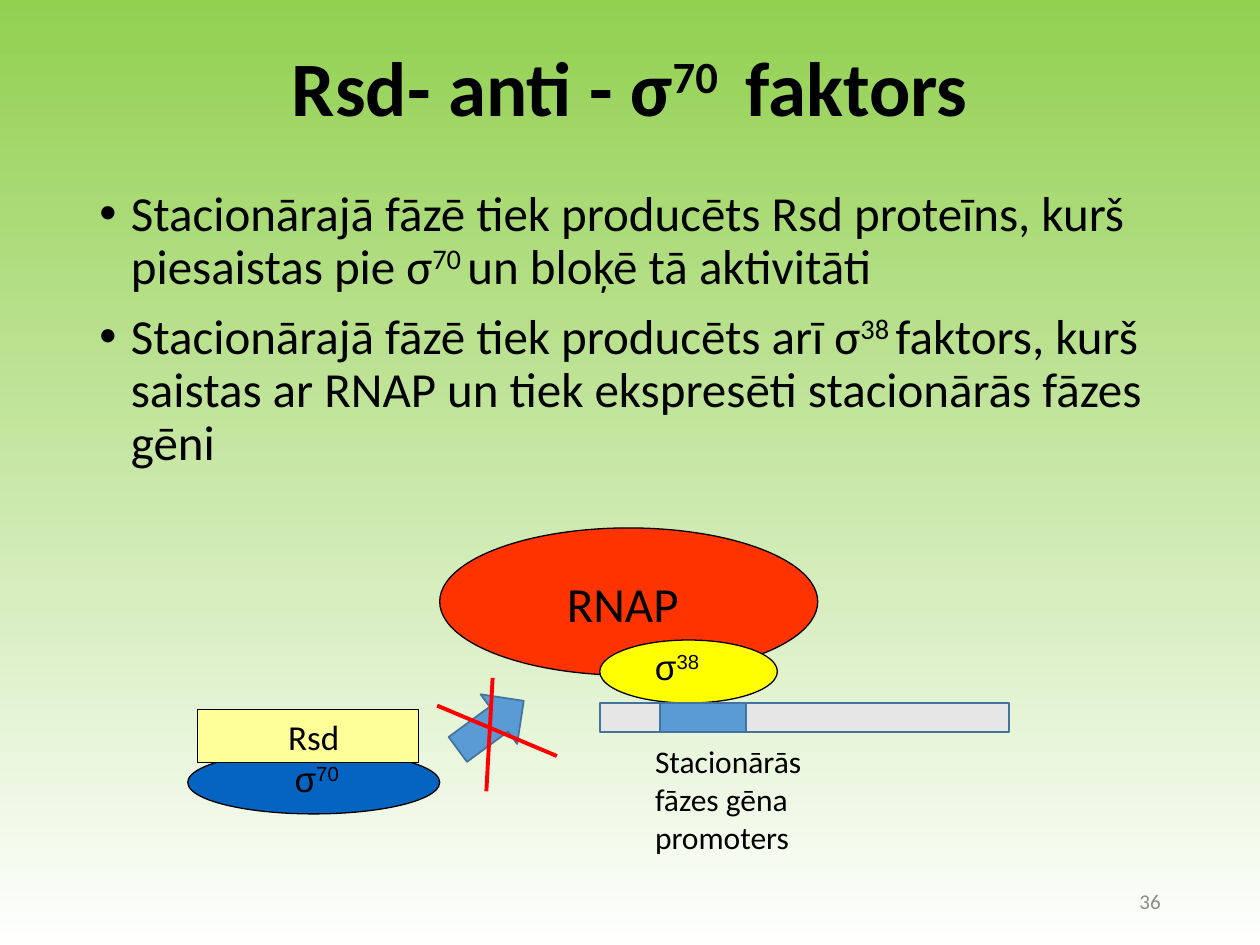
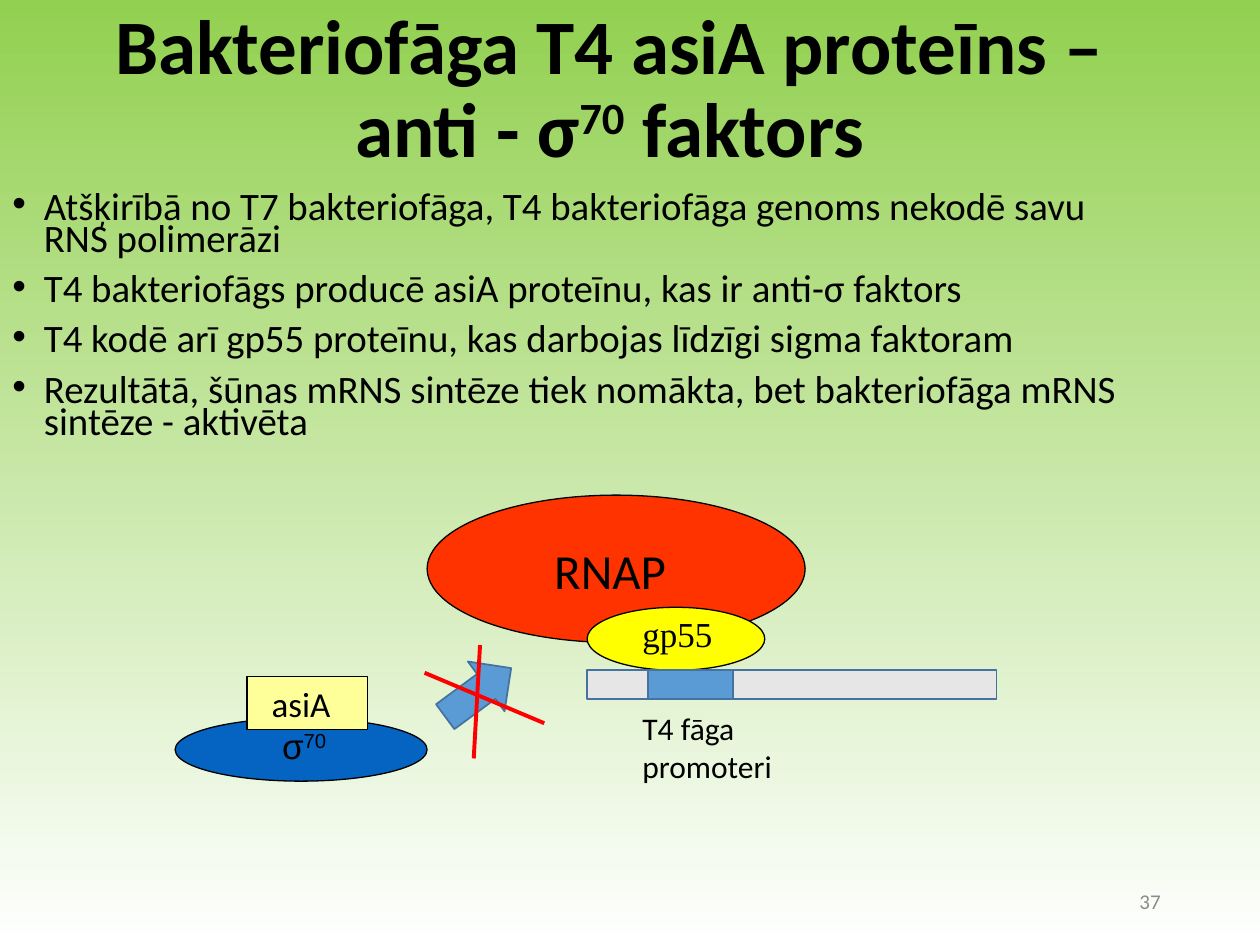
from collections import namedtuple
from dataclasses import dataclass

from lxml.etree import SubElement
from pptx import Presentation
from pptx.dml.color import RGBColor
from pptx.enum.shapes import MSO_CONNECTOR as Connector, MSO_SHAPE as Shape
from pptx.enum.text import MSO_ANCHOR as Anchor, MSO_AUTO_SIZE as AutoSize, PP_ALIGN as Align
from pptx.oxml.ns import qn
from pptx.util import Inches, Pt

Box = namedtuple("Box", "left top width height")
Style = namedtuple("Style", "size font color bold", defaults=("Calibri", "000000", False))


@dataclass(frozen=True)
class Theme:
    """Colours, line widths and text styles of the deck."""
    sky: str = "92D050"
    ground: str = "FFFFFF"
    outline: str = "000000"
    polymerase: str = "FF3300"
    sigma: str = "0563C1"
    blocker: str = "FFFF99"
    factor: str = "FFFF00"
    dna: str = "E7E6E6"
    accent: str = "5B9BD5"
    accent_line: str = "43739E"
    cross: str = "FF0000"
    thin: float = 0.75
    medium: float = 1
    thick: float = 2.25
    title: Style = Style(44, bold=True)
    large: Style = Style(28)
    protein: Style = Style(20)
    greek: Style = Style(20, "Arial")
    serif: Style = Style(20, "Times New Roman")
    caption: Style = Style(18)
    number: Style = Style(12, color="8C8C8C")


THEME = Theme()


def rgb(color):
    """Turn a hex string into a colour."""
    return RGBColor.from_string(color)


def place(box, left, top, width, height):
    """Return a part's box in page inches from its offset inside a parent box."""
    return Box(box.left + left, box.top + top, width, height)


def write(para, text, style):
    """Fill a paragraph; the parts between ^ marks are superscript."""
    for index, part in enumerate(text.split("^")):
        if not part:
            continue
        span = para.add_run()
        span.text = part
        font = span.font
        font.size, font.name, font.bold = Pt(style.size), style.font, style.bold
        font.color.rgb = rgb(style.color)
        if index % 2:
            span._r.get_or_add_rPr().set("baseline", "30000")


def add_text(page, box, text, style, align=Align.LEFT, anchor=Anchor.TOP):
    """Add a wrapping one-paragraph text box."""
    frame = page.shapes.add_textbox(*map(Inches, box)).text_frame
    frame.word_wrap = True
    frame.vertical_anchor = anchor
    frame.paragraphs[0].alignment = align
    write(frame.paragraphs[0], text, style)


def add_figure(shapes, kind, box, fill, line=THEME.outline, width=THEME.thin):
    """Add a filled, outlined preset shape."""
    figure = shapes.add_shape(kind, *map(Inches, box))
    figure.shadow.inherit = False
    figure.fill.solid()
    figure.fill.fore_color.rgb = rgb(fill)
    figure.line.color.rgb = rgb(line)
    figure.line.width = Pt(width)
    return figure


def add_title(page, box, text):
    """Place and format the title placeholder."""
    title = page.shapes.title
    title.left, title.top, title.width, title.height = map(Inches, box)
    frame = title.text_frame
    frame.auto_size = AutoSize.NONE
    frame.vertical_anchor = Anchor.MIDDLE
    para = frame.paragraphs[0]
    para.alignment = Align.CENTER
    para.line_spacing = 0.9
    write(para, text, THEME.title)


def add_bullets(page, box, items, style, spacing):
    """Add a bulleted list."""
    frame = page.shapes.add_textbox(*map(Inches, box)).text_frame
    frame.word_wrap = True
    for index, item in enumerate(items):
        para = frame.add_paragraph() if index else frame.paragraphs[0]
        props = para._p.get_or_add_pPr()
        props.set("marL", str(Inches(0.25)))
        props.set("indent", str(Inches(-0.25)))
        SubElement(props, qn("a:buFont")).set("typeface", "Arial")
        SubElement(props, qn("a:buChar")).set("char", "•")
        para.line_spacing = spacing
        para.space_before = Pt(10 if index else 0)
        write(para, item, style)


def add_blocked_arrow(page, box):
    """Add the crossed-out arrow as one group."""
    shapes = page.shapes.add_group_shape().shapes
    arrow = add_figure(shapes, Shape.DOWN_ARROW, place(box, 0.18, 0.05, 0.49, 0.65),
                       THEME.accent, THEME.accent_line, THEME.medium)
    arrow.rotation = 233.6
    for start, end in (((0.39, 0.9), (0.44, 0)), ((0.95, 0.62), (0, 0.22))):
        ends = [Inches(edge + shift) for point in (start, end)
                for edge, shift in zip((box.left, box.top), point)]
        stroke = shapes.add_connector(Connector.STRAIGHT, *ends)
        stroke.line.color.rgb = rgb(THEME.cross)
        stroke.line.width = Pt(THEME.thick)
        SubElement(stroke._element.spPr, qn("a:effectLst"))


def add_diagram(page, box, blocker, blocker_width, factor, factor_style, caption):
    """Draw the blocked sigma factor beside the polymerase on its promoter."""
    def ellipse(spot, fill):
        add_figure(page.shapes, Shape.OVAL, place(box, *spot), fill)

    def label(spot, text, style, align=Align.LEFT):
        add_text(page, place(box, *spot), text, style, align)

    ellipse((2, 0, 3, 1.17), THEME.polymerase)
    ellipse((0, 1.77, 2, 0.5), THEME.sigma)
    label((2.91, 0.31, 1.42, 0.57), "RNAP", THEME.large)
    label((0.75, 1.77, 1, 0.44), "σ^70^", THEME.greek)
    blocker_left = 0.95 + 0.1 - blocker_width / 2 if blocker_width < 1 else 0.08
    add_figure(page.shapes, Shape.RECTANGLE,
               place(box, blocker_left, 1.44, blocker_width, 0.42), THEME.blocker)
    label((0.25, 1.44, 1.5, 0.44), blocker, THEME.protein, Align.CENTER)
    add_blocked_arrow(page, place(box, 1.98, 1.19, 0.95, 0.9))
    ellipse((3.27, 0.89, 1.41, 0.5), THEME.factor)
    label((3.61, 0.88, 1, 0.44), factor, factor_style)
    for left, width, fill in ((3.27, 3.25, THEME.dna), (3.75, 0.68, THEME.accent)):
        add_figure(page.shapes, Shape.RECTANGLE, place(box, left, 1.39, width, 0.23),
                   fill, THEME.accent_line, THEME.medium)
    label((3.61, 1.65, 1.59, 1.01), caption, THEME.caption)


def add_page(deck, number, title_left, title):
    """Add a title-only slide with its title and page number."""
    page = deck.slides.add_slide(deck.slide_layouts[5])
    add_title(page, Box(title_left, 0, 8.62, 1.45), title)
    add_text(page, Box(7.06, 6.95, 2.25, 0.4), str(number), THEME.number,
             Align.RIGHT, Anchor.MIDDLE)
    return page


def add_rsd_page(deck):
    """Build the slide on the Rsd protein."""
    page = add_page(deck, 36, 0.69, "Rsd- anti - σ^70 ^ faktors")
    add_bullets(page, Box(0.69, 1.45, 8.62, 2.7), (
        "Stacionārajā fāzē tiek producēts Rsd proteīns, kurš piesaistas pie "
        "σ^70 ^un bloķē tā aktivitāti",
        "Stacionārajā fāzē tiek producēts arī σ^38 ^faktors, kurš saistas ar RNAP "
        "un tiek ekspresēti stacionārās fāzes gēni",
    ), THEME.large, 0.9)
    add_diagram(page, Box(1.49, 4.19, 6.52, 2.66), "Rsd", 1.75, "σ^38^", THEME.greek,
                "Stacionārās fāzes gēna promoters")


def add_asia_page(deck):
    """Build the slide on the asiA protein."""
    page = add_page(deck, 37, 0.53, "Bakteriofāga T4 asiA proteīns – anti - σ^70^ faktors")
    add_bullets(page, Box(0, 1.49, 9.29, 2.06), (
        "Atšķirībā no T7 bakteriofāga, T4 bakteriofāga genoms nekodē savu RNS polimerāzi",
        "T4 bakteriofāgs producē asiA proteīnu, kas ir anti-σ faktors",
        "T4 kodē arī gp55 proteīnu, kas darbojas līdzīgi sigma faktoram",
        "Rezultātā, šūnas mRNS sintēze tiek nomākta, bet bakteriofāga mRNS sintēze - aktivēta",
    ), Style(22.2), 0.7)
    add_diagram(page, Box(1.39, 3.93, 6.52, 2.36), "asiA", 0.96, "gp55", THEME.serif,
                "T4 fāga promoteri")


def main():
    """Build and save the deck."""
    deck = Presentation()
    deck.slide_width, deck.slide_height = Inches(10), Inches(7.5)
    backdrop = deck.slide_master.background.fill
    backdrop.gradient()
    backdrop.gradient_angle = 270
    for stop, color in zip(backdrop.gradient_stops, (THEME.sky, THEME.ground)):
        stop.color.rgb = rgb(color)
    add_rsd_page(deck)
    add_asia_page(deck)
    deck.save("out.pptx")


if __name__ == "__main__":
    main()
